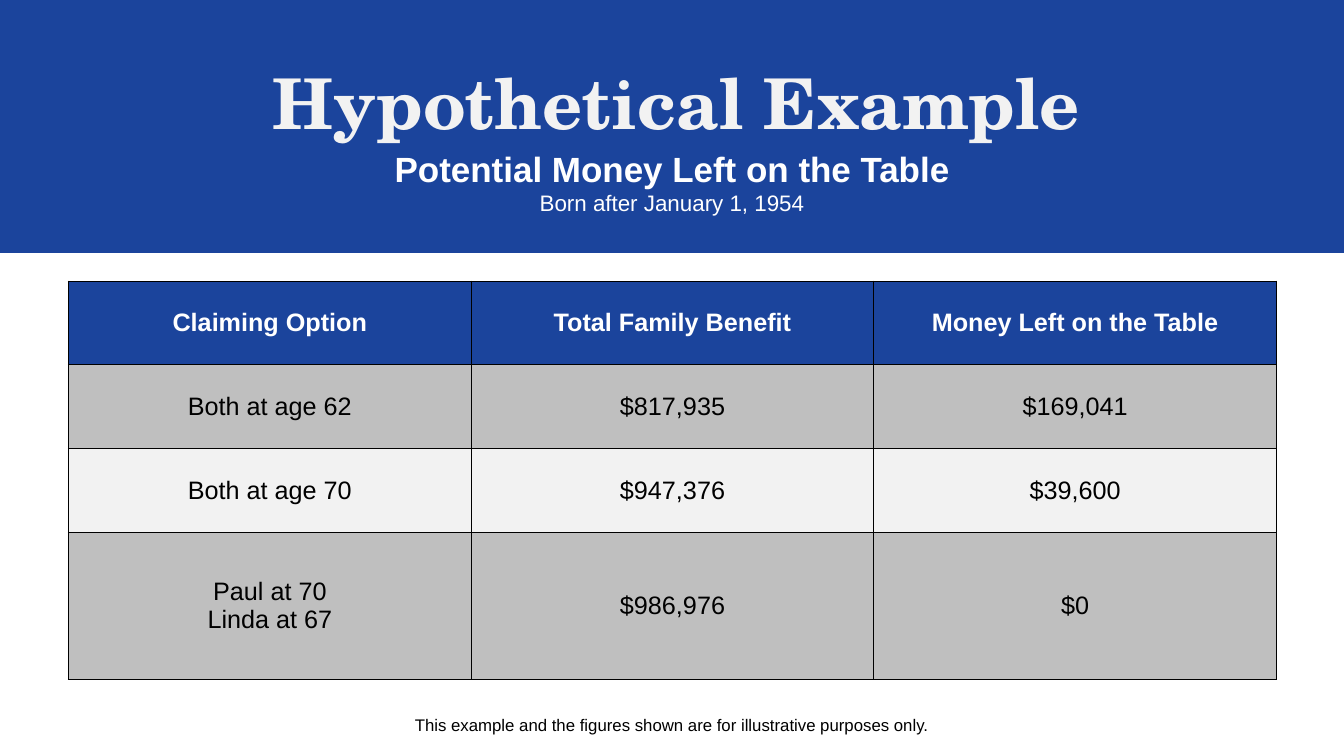
from lxml import etree
from pptx import Presentation, util as u
from pptx.dml.color import RGBColor
from pptx.enum import shapes, text
from pptx.oxml import ns

COLOURS = {"blue": "1B449C", "white": "FFFFFF", "pale": "F2F2F2",
           "grey": "BFBFBF", "black": "000000"}
ROWS = [
    ("Claiming Option", "Total Family Benefit", "Money Left on the Table"),
    ("Both at age 62", "$817,935", "$169,041"),
    ("Both at age 70", "$947,376", "$39,600"),
    ("Paul at 70\nLinda at 67", "$986,976", "$0"),
]
ROW_HEIGHTS = [0.83, 0.83, 0.83, 1.46]
ROW_FILLS = ["blue", "grey", "pale", "grey"]


def colour(name):
    return RGBColor.from_string(COLOURS[name])


def write(para, words, size=18, name="Arial", ink="black", bold=False):
    para.alignment = text.PP_ALIGN.CENTER
    for index, line in enumerate(words.split("\n")):
        if index:
            para.add_line_break()
        if line:
            span = para.add_run()
            span.text = line
            span.font.size = u.Pt(size)
            span.font.name = name
            span.font.bold = bold
            span.font.color.rgb = colour(ink)


class ExampleSlide:
    def __init__(self, deck):
        self.page = deck.slides.add_slide(deck.slide_layouts[6])

    def band(self, *place):
        box = self.page.shapes.add_shape(
            shapes.MSO_SHAPE.RECTANGLE, *map(u.Inches, place))
        box.shadow.inherit = False
        box.fill.solid()
        box.fill.fore_color.rgb = colour("blue")
        box.line.fill.background()

    def label(self, place, *parts):
        box = self.page.shapes.add_textbox(*map(u.Inches, place))
        frame = box.text_frame
        frame.word_wrap = True
        frame.auto_size = text.MSO_AUTO_SIZE.SHAPE_TO_FIT_TEXT
        for words, style in parts:
            write(frame.paragraphs[0], words, **style)

    def border(self, cell):
        properties = cell._tc.get_or_add_tcPr()
        for index, side in enumerate(("lnL", "lnR", "lnT", "lnB")):
            line = etree.Element(ns.qn(f"a:{side}"), w=str(u.Pt(1)))
            fill = etree.SubElement(line, ns.qn("a:solidFill"))
            etree.SubElement(fill, ns.qn("a:srgbClr"), val=COLOURS["black"])
            properties.insert(index, line)

    def table(self, *place):
        grid = self.page.shapes.add_table(
            len(ROWS), len(ROWS[0]), *map(u.Inches, place)).table
        for row, height in zip(grid.rows, ROW_HEIGHTS):
            row.height = u.Inches(height)
        for r, values in enumerate(ROWS):
            header = r == 0
            for c, value in enumerate(values):
                cell = grid.cell(r, c)
                cell.vertical_anchor = text.MSO_ANCHOR.MIDDLE
                cell.fill.solid()
                cell.fill.fore_color.rgb = colour(ROW_FILLS[r])
                self.border(cell)
                write(cell.text_frame.paragraphs[0], value, bold=header,
                      ink="white" if header else "black")


def main():
    deck = Presentation()
    deck.slide_width, deck.slide_height = u.Inches(13.33), u.Inches(7.5)
    slide = ExampleSlide(deck)
    slide.band(0, 0, 13.33, 2.51)
    slide.label((0, 0.54, 13.42, 0.94),
                ("Hypothetical Example",
                 dict(size=50, name="TeX Gyre Schola", ink="pale", bold=True)))
    slide.label((0, 7.04, 13.33, 0.3),
                ("This example and the figures shown are for illustrative purposes only.",
                 dict(size=12)))
    slide.label((1.2, 1.41, 10.93, 0.79),
                ("Potential Money Left on the Table\n",
                 dict(size=25, ink="white", bold=True)),
                ("Born after January 1, 1954", dict(size=16, ink="white")))
    slide.table(0.68, 2.79, 11.98, sum(ROW_HEIGHTS))
    deck.save("out.pptx")


if __name__ == "__main__":
    main()
